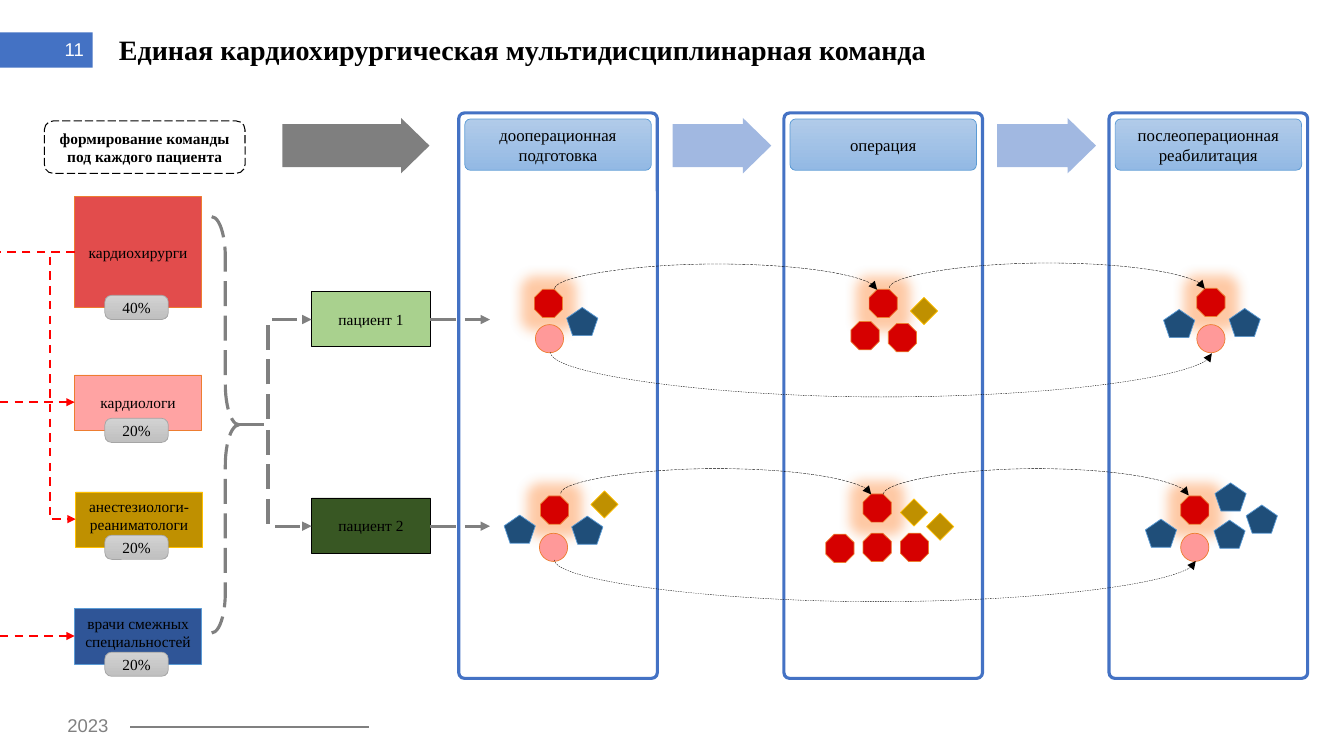
"""Build the slide on the single cardiac surgery multidisciplinary team."""
from lxml import etree
from pptx import Presentation
from pptx import util as u
from pptx.dml.color import RGBColor
from pptx.enum import dml, shapes, text
from pptx.oxml import ns

BLACK = RGBColor(0, 0, 0)
WHITE = RGBColor(0xFF, 0xFF, 0xFF)
GREY = RGBColor(0x80, 0x80, 0x80)
BLUE = RGBColor(0x44, 0x72, 0xC4)
SKY = RGBColor(0x5B, 0x9B, 0xD5)
NAVY = RGBColor(0x1F, 0x4E, 0x79)
DEEP_BLUE = RGBColor(0x2F, 0x55, 0x97)
RED = RGBColor(0xD6, 0, 0)
BRIGHT_RED = RGBColor(0xFF, 0, 0)
PINK = RGBColor(0xFF, 0x99, 0x99)
ORANGE = RGBColor(0xED, 0x7D, 0x31)
OCHRE = RGBColor(0xBF, 0x90, 0)
GOLD = RGBColor(0xFF, 0xC0, 0)
LIGHT_GREEN = RGBColor(0xA9, 0xD1, 0x8E)
DARK_GREEN = RGBColor(0x38, 0x57, 0x23)
SILVER = RGBColor(0xA5, 0xA5, 0xA5)
BADGE_FILL = [RGBColor(0xD2, 0xD2, 0xD2), RGBColor(0xC0, 0xC0, 0xC0)]
HEADER_FILL = [RGBColor(0xB1, 0xCB, 0xE9), RGBColor(0x93, 0xB9, 0xE4)]

SERIF = "Times New Roman"
DASH = dml.MSO_LINE.DASH
LONG_DASH = dml.MSO_LINE.LONG_DASH
KIND = shapes.MSO_SHAPE
LINK = shapes.MSO_CONNECTOR
ALIGN = text.PP_ALIGN
ANCHOR = text.MSO_ANCHOR

deck = Presentation()
deck.slide_width, deck.slide_height = u.Inches(13.33), u.Inches(7.5)
page = deck.slides.add_slide(deck.slide_layouts[6])


def add_box(kind, at, fill=None, line=None, width=0.5, dash=None, alpha=None, adjust=(),
            words="", size=11, font=SERIF, color=BLACK, bold=False,
            align=ALIGN.CENTER, anchor=ANCHOR.MIDDLE, wrap=True):
    left, top, wide, high = map(u.Inches, at)
    if kind is None:
        box = page.shapes.add_textbox(left, top, wide, high)
    else:
        box = page.shapes.add_shape(kind, left, top, wide, high)
        box.shadow.inherit = False
        for index, value in enumerate(adjust):
            box.adjustments[index] = value
    if isinstance(fill, list):
        box.fill.gradient()
        box.fill.gradient_angle = 270
        for stop, tone in zip(box.fill.gradient_stops, fill):
            stop.color.rgb = tone
    elif fill is None:
        box.fill.background()
    else:
        box.fill.solid()
        box.fill.fore_color.rgb = fill
        if alpha:
            tone = box.fill._xPr.find(".//" + ns.qn("a:srgbClr"))
            etree.SubElement(tone, ns.qn("a:alpha"), val=str(alpha * 1000))
    if line is None:
        box.line.fill.background()
    else:
        box.line.color.rgb, box.line.width = line, u.Pt(width)
        if dash:
            box.line.dash_style = dash
    if words:
        frame = box.text_frame
        frame.word_wrap, frame.vertical_anchor = wrap, anchor
        frame.text = words
        for para in frame.paragraphs:
            para.alignment = align
            for span in para.runs:
                span.font.color.rgb = color
                for name, value in {"name": font, "size": u.Pt(size), "bold": bold}.items():
                    setattr(span.font, name, value)
    return box


def add_link(kind, points, color, width, dash=None, arrow=True, bend=None, turn=None):
    link = page.shapes.add_connector(kind, *map(u.Inches, points))
    link.line.color.rgb, link.line.width = color, u.Pt(width)
    if dash:
        link.line.dash_style = dash
    props = link._element.spPr
    if arrow:
        etree.SubElement(link.line._get_or_add_ln(), ns.qn("a:tailEnd"), type="triangle")
    etree.SubElement(props, ns.qn("a:effectLst"))
    if bend is not None:
        guides = props.find(".//" + ns.qn("a:avLst"))
        etree.SubElement(guides, ns.qn("a:gd"), name="adj1", fmla=f"val {round(bend * 100000)}")
    if turn:
        props.find(ns.qn("a:xfrm")).set("rot", str(turn * 60000))


add_box(KIND.RECTANGLE, (0, 0.32, 0.92, 0.35), BLUE)
add_box(None, (0, 0.29, 0.93, 0.4), words="11", size=13.2, font="Arial", color=WHITE,
        align=ALIGN.RIGHT)
add_box(None, (0.57, 7.03, 0.63, 0.32), words="2023", size=13.2, font="Arial", color=GREY,
        align=ALIGN.LEFT, anchor=ANCHOR.TOP, wrap=False)
add_link(LINK.STRAIGHT, (1.29, 7.21, 3.66, 7.21), GREY, 1.5, arrow=False)
title = add_box(None, (1.18, 0.28, 10, 0.47), words="Единая кардиохирургическая мультидисциплинарная команда",
                size=20, bold=True, align=ALIGN.LEFT)
for side in ("left", "right", "top", "bottom"):
    setattr(title.text_frame, "margin_" + side, 0)
title.text_frame.paragraphs[0].line_spacing = 0.9

stages = ["дооперационная\nподготовка", "операция", "послеоперационная\nреабилитация"]
for column, stage in enumerate(stages):
    left = 4.55 + 3.225 * column
    add_box(KIND.ROUNDED_RECTANGLE, (left, 1.12, 1.97, 5.61), line=BLUE, width=2.25, adjust=[0.029])
    add_box(KIND.ROUNDED_RECTANGLE, (left + 0.06, 1.18, 1.85, 0.51), HEADER_FILL, SKY,
            adjust=[0.112], words=stage, size=12)
arrows = [(2.8, 1.46, BLACK), (6.67, 0.98, BLUE), (9.89, 0.98, BLUE)]
for left, wide, tone in arrows:
    add_box(KIND.RIGHT_ARROW, (left, 1.17, wide, 0.55), tone, alpha=50, adjust=[0.774, 0.512])

add_box(KIND.ROUNDED_RECTANGLE, (0.44, 1.2, 1.99, 0.52), line=BLACK, width=0.75, dash=LONG_DASH,
        words="формирование команды\vпод каждого пациента", bold=True)
specialists = [
    ("кардиохирурги", "40%", 0.74, 1.95, 1.1, RED, ORANGE, 70, ANCHOR.MIDDLE),
    ("кардиологи", "20%", 0.74, 3.72, 0.55, PINK, ORANGE, 90, ANCHOR.MIDDLE),
    ("анестезиологи-реаниматологи", "20%", 0.75, 4.88, 0.55, OCHRE, GOLD, None, ANCHOR.TOP),
    ("врачи смежных специальностей", "20%", 0.74, 6.04, 0.55, DEEP_BLUE, SKY, None, ANCHOR.TOP),
]
for words, share, left, top, high, fill, line, alpha, anchor in specialists:
    add_box(KIND.RECTANGLE, (left, top, 1.26, high), fill, line, alpha=alpha, words=words, anchor=anchor)
    add_box(KIND.ROUNDED_RECTANGLE, (1.04, top + high - 0.12, 0.63, 0.24), BADGE_FILL, SILVER,
            adjust=[0.281], words=share)

add_link(LINK.STRAIGHT, (0.74, 2.5, 0, 2.5), BRIGHT_RED, 1.5, DASH, arrow=False)
for level in (3.99, 6.31):
    add_link(LINK.STRAIGHT, (0, level, 0.74, level), BRIGHT_RED, 1.5, DASH)
add_link(LINK.ELBOW, (0.74, 2.5, 0.75, 5.15), BRIGHT_RED, 1.5, DASH, bend=-25)

add_box(KIND.RIGHT_BRACE, (2.1, 2.15, 0.27, 4.13), line=GREY, width=2.25, dash=LONG_DASH,
        adjust=[1.486, 0.5])
patients = [("пациент 1", 3.17, LIGHT_GREEN), ("пациент 2", 5.22, DARK_GREEN)]
for words, level, fill in patients:
    add_box(KIND.RECTANGLE, (3.09, level - 0.28, 1.18, 0.55), fill, BLACK, words=words)
    add_link(LINK.ELBOW, (2.37, 4.21, 3.09, level), GREY, 2.25, LONG_DASH, bend=0.4)
    add_link(LINK.STRAIGHT, (4.27, level, 4.86, level), GREY, 2.25, LONG_DASH)

leads = [(5.3, 2.87), (8.62, 2.87), (11.87, 2.86), (5.36, 4.92), (8.56, 4.9), (11.71, 4.92)]
for left, top in leads:
    lead = add_box(KIND.OCTAGON, (left, top, 0.28, 0.28), RED, ORANGE)
    effects = lead._element.spPr.find(ns.qn("a:effectLst"))
    glow = etree.SubElement(effects, ns.qn("a:glow"), rad=str(u.Pt(18)))
    tone = etree.SubElement(glow, ns.qn("a:srgbClr"), val=str(ORANGE))
    for name, value in {"a:satMod": "175000", "a:alpha": "40000"}.items():
        etree.SubElement(tone, ns.qn(name), val=value)

members = [
    (KIND.OCTAGON, 0.28, 0.28, RED, ORANGE,
     [(8.44, 3.19), (8.81, 3.21), (8.19, 5.3), (8.56, 5.29), (8.93, 5.29)]),
    (KIND.OVAL, 0.28, 0.28, PINK, ORANGE, [(5.31, 3.22), (11.87, 3.22), (5.35, 5.29), (11.71, 5.29)]),
    (KIND.DIAMOND, 0.27, 0.27, OCHRE, GOLD, [(9.03, 2.95), (5.86, 4.87), (8.93, 4.95), (9.19, 5.09)]),
    (KIND.REGULAR_PENTAGON, 0.31, 0.28, NAVY, SKY,
     [(5.62, 3.05), (11.54, 3.07), (12.19, 3.06), (5, 5.11), (5.67, 5.12),
      (11.36, 5.15), (12.04, 5.16), (12.05, 4.79), (12.36, 5.01)]),
]
for kind, wide, high, fill, line, places in members:
    for left, top in places:
        add_box(kind, (left, top, wide, high), fill, line)

drop = 0.01
moves = [
    (5.5, 8.7, 2.87, -0.25, LONG_DASH), (8.82, 11.95, 2.86, -0.25, LONG_DASH),
    (5.56, 8.64, 4.9, -0.25, LONG_DASH), (8.76, 11.79, 4.91, -0.26, LONG_DASH),
    (5.46, 12.02, 3.5, 0.45, DASH), (5.5, 11.86, 5.56, 0.42, DASH),
]
for start, end, level, sag, dash in moves:
    middle, half = (start + end) / 2, (end - start) / 2
    add_link(LINK.CURVE, (middle + drop / 2, level - half, middle - drop / 2, level + half),
             BLACK, 0.25, dash, bend=sag / drop, turn=270)

deck.save("out.pptx")
